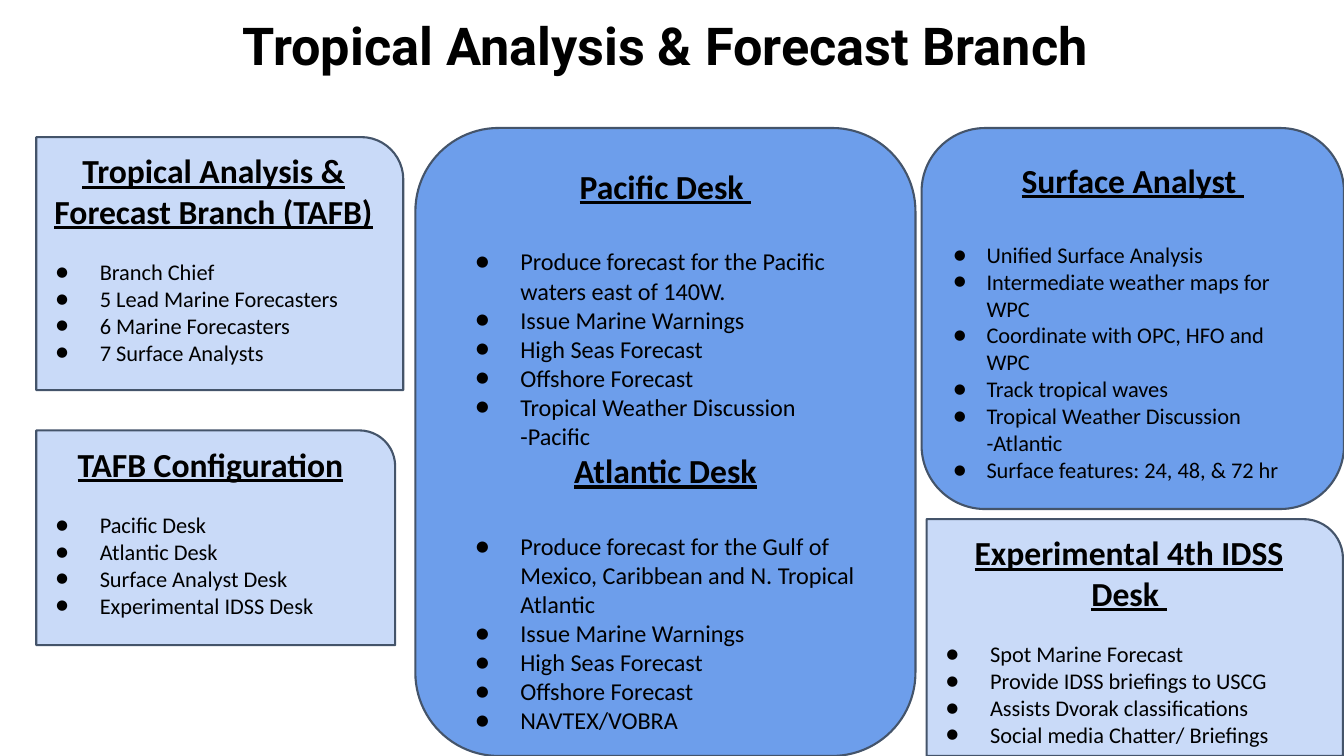
from dataclasses import dataclass

from lxml import etree
from pptx import Presentation
from pptx.dml.color import RGBColor
from pptx.enum.shapes import MSO_SHAPE
from pptx.enum.text import MSO_ANCHOR, PP_ALIGN
from pptx.oxml.ns import qn
from pptx.util import Emu, Pt

ROUNDED = MSO_SHAPE.ROUNDED_RECTANGLE
ONE_ROUNDED = MSO_SHAPE.ROUND_1_RECTANGLE
CENTER, LEFT, TOP = PP_ALIGN.CENTER, PP_ALIGN.LEFT, MSO_ANCHOR.TOP


@dataclass(frozen=True)
class Theme:
    ink: RGBColor = RGBColor(0x00, 0x00, 0x00)
    outline: RGBColor = RGBColor(0x44, 0x54, 0x6A)
    pale: RGBColor = RGBColor(0xC9, 0xDA, 0xF8)
    strong: RGBColor = RGBColor(0x6D, 0x9E, 0xEB)
    title_font: str = "Roboto"
    body_font: str = "Calibri"
    title_size: float = 37.3
    heading_size: float = 24
    item_size: float = 16
    desk_item_size: float = 17.3
    outline_width: float = 1.5
    line_height: float = 1.22


@dataclass(frozen=True)
class PanelStyle:
    outline_shape: int
    fill: RGBColor
    item_size: float
    gap_size: float  # type size of the one-line gap under a heading
    indent: int
    hanging: int


THEME = Theme()
BRANCH = PanelStyle(ONE_ROUNDED, THEME.pale, THEME.item_size, THEME.item_size, 50, 44)
ANALYST = PanelStyle(ROUNDED, THEME.strong, THEME.item_size, THEME.heading_size, 33, 44)
DESKS = PanelStyle(ROUNDED, THEME.strong, THEME.desk_item_size, THEME.heading_size, 67, 45)

# Each panel: box in px, style, sections of (heading, items)
PANELS = [
    ((36, 136, 364, 251), BRANCH, [
        ("Tropical Analysis & Forecast Branch (TAFB)",
         ["Branch Chief", "5 Lead Marine Forecasters", "6 Marine Forecasters",
          "7 Surface Analysts"]),
    ]),
    ((36, 427, 356, 213), BRANCH, [
        ("TAFB Configuration",
         ["Pacific Desk", "Atlantic Desk", "Surface Analyst Desk",
          "Experimental IDSS Desk"]),
    ]),
    ((914, 127, 419, 378), ANALYST, [
        ("Surface Analyst ",
         ["Unified Surface Analysis", "Intermediate weather maps for WPC",
          "Coordinate with OPC, HFO and WPC", "Track tropical waves",
          "Tropical Weather Discussion -Atlantic",
          "Surface features: 24, 48, & 72 hr"]),
    ]),
    ((412, 127, 496, 623), DESKS, [
        ("Pacific Desk ",
         ["Produce forecast for the Pacific waters east of 140W.",
          "Issue Marine Warnings", "High Seas Forecast", "Offshore Forecast",
          "Tropical Weather Discussion", "-Pacific"]),
        ("Atlantic Desk",
         ["Produce forecast for the Gulf of Mexico, Caribbean and N. Tropical Atlantic",
          "Issue Marine Warnings", "High Seas Forecast", "Offshore Forecast",
          "NAVTEX/VOBRA"]),
    ]),
    ((919, 515, 413, 235), BRANCH, [
        ("Experimental 4th IDSS Desk ",
         ["Spot Marine Forecast", "Provide IDSS briefings to USCG",
          "Assists Dvorak classifications", "Social media Chatter/ Briefings"]),
    ]),
]


def px(length):
    return Emu(length * 9144)


def prepare_frame(frame):
    frame.word_wrap = True
    frame.vertical_anchor = TOP
    frame.margin_left = frame.margin_right = px(13)
    frame.margin_top = frame.margin_bottom = px(13)


def set_font(paragraph, name, size, bold=False, underline=False):
    font = paragraph.font
    font.name, font.size = name, Pt(size)
    font.bold, font.underline = bold, underline
    font.color.rgb = THEME.ink


def set_indent(paragraph, indent, hanging, bulleted):
    properties = paragraph._p.get_or_add_pPr()
    properties.set("marL", str(px(indent)))
    properties.set("indent", str(-px(hanging) if bulleted else 0))
    if bulleted:
        etree.SubElement(properties, qn("a:buFont")).set("typeface", THEME.body_font)
        etree.SubElement(properties, qn("a:buChar")).set("char", "●")


def add_title(slide, box, text):
    frame = slide.shapes.add_textbox(*map(px, box)).text_frame
    prepare_frame(frame)
    title = frame.paragraphs[0]
    title.text = text
    title.alignment = CENTER
    set_font(title, THEME.title_font, THEME.title_size, bold=True)


def write_heading(paragraph, text, gap_size):
    paragraph.text = text
    paragraph.alignment = CENTER
    paragraph.space_after = Pt(gap_size * THEME.line_height)
    set_font(paragraph, THEME.body_font, THEME.heading_size, bold=True, underline=True)


def write_item(paragraph, text, style):
    """Items that start with a dash continue the item above, without a bullet."""
    paragraph.text = text
    paragraph.alignment = LEFT
    set_indent(paragraph, style.indent, style.hanging, not text.startswith("-"))
    set_font(paragraph, THEME.body_font, style.item_size)


def add_panel(slide, box, style, sections):
    panel = slide.shapes.add_shape(style.outline_shape, *map(px, box))
    panel.shadow.inherit = False
    panel.fill.solid()
    panel.fill.fore_color.rgb = style.fill
    panel.line.color.rgb = THEME.outline
    panel.line.width = Pt(THEME.outline_width)

    frame = panel.text_frame
    prepare_frame(frame)
    for number, (heading, items) in enumerate(sections):
        first = frame.add_paragraph() if number else frame.paragraphs[0]
        write_heading(first, heading, style.gap_size)
        for item in items:
            write_item(frame.add_paragraph(), item, style)


def main():
    presentation = Presentation()
    presentation.slide_width, presentation.slide_height = px(1333), px(750)
    slide = presentation.slides.add_slide(presentation.slide_layouts[6])
    add_title(slide, (0, 0, 1333, 84), "Tropical Analysis & Forecast Branch ")
    for box, style, sections in PANELS:
        add_panel(slide, box, style, sections)
    presentation.save("out.pptx")


if __name__ == "__main__":
    main()
